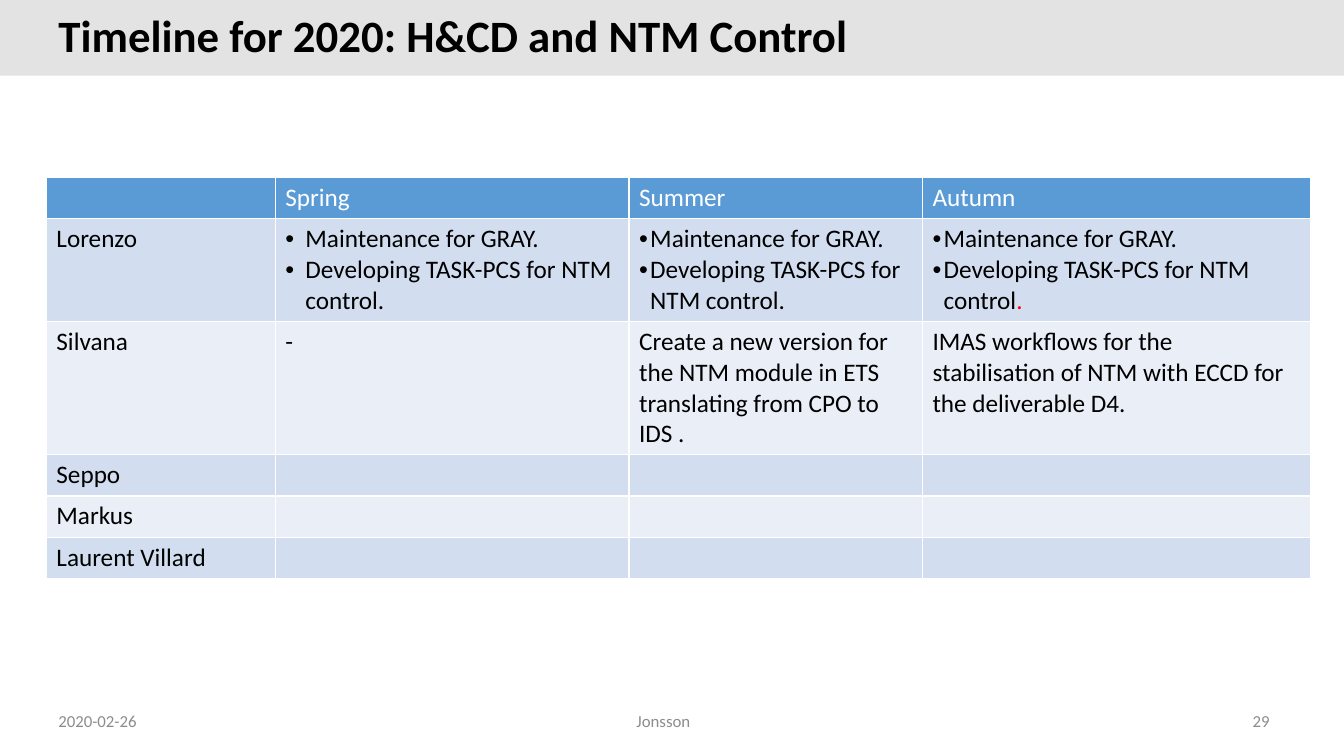
from lxml import etree
from pptx import Presentation
from pptx.dml.color import RGBColor
from pptx.enum import shapes, text
from pptx.oxml import ns
from pptx.util import Inches, Pt

BLACK = RGBColor(0, 0, 0)
WHITE = RGBColor(255, 255, 255)
RED = RGBColor(255, 0, 0)
BAND_GRAY = RGBColor(0xE3, 0xE3, 0xE3)
FOOTER_GRAY = RGBColor(0x8C, 0x8C, 0x8C)
HEADER_BLUE = RGBColor(0x5B, 0x9B, 0xD5)
ROW_FILLS = (RGBColor(0xEA, 0xEF, 0xF7), RGBColor(0xD2, 0xDE, 0xEF))

COLUMN_WIDTHS = (2.27, 3.51, 2.91, 3.85)
ROW_HEIGHTS = (0.41, 1.02, 1.32, 0.41, 0.41, 0.41)
GRAY_TASKS = ["Maintenance for GRAY.", "Developing TASK-PCS for NTM control."]
ROWS = (
    ("", "Spring", "Summer", "Autumn"),
    ("Lorenzo", GRAY_TASKS, GRAY_TASKS, GRAY_TASKS),
    ("Silvana", "-",
     "Create a new version for the NTM module in ETS translating from CPO to IDS .",
     "IMAS workflows for the stabilisation of NTM with ECCD for the deliverable D4."),
    ("Seppo", "", "", ""),
    ("Markus", "", "", ""),
    ("Laurent Villard", "", "", ""),
)


def add_run(p, words, size=18, color=BLACK, bold=False):
    r = p.add_run()
    r.text = words
    r.font.name = "Calibri"
    r.font.size = Pt(size)
    r.font.bold = bold
    r.font.color.rgb = color
    return r


def set_bullet(p, indent):
    """Give the paragraph a hanging bullet, indent in inches."""
    pPr = p._p.get_or_add_pPr()
    pPr.set("marL", str(Inches(indent)))
    pPr.set("indent", str(-Inches(indent)))
    etree.SubElement(pPr, ns.qn("a:buFont")).set("typeface", "Arial")
    etree.SubElement(pPr, ns.qn("a:buChar")).set("char", "•")


def add_band(slide):
    """Draw the gray strip behind the title."""
    sp = slide.shapes.add_shape(shapes.MSO_SHAPE.RECTANGLE, 0, 0,
                                Inches(13.33), Inches(0.75))
    sp.shadow.inherit = False
    sp.fill.solid()
    sp.fill.fore_color.rgb = BAND_GRAY
    sp.line.fill.background()
    slide.shapes._spTree.insert(2, sp._element)


def set_title(slide, words):
    title = slide.shapes.title
    title.left, title.top = Inches(0.48), Inches(0.13)
    title.width, title.height = Inches(11.54), Inches(0.49)
    tf = title.text_frame
    tf.auto_size = text.MSO_AUTO_SIZE.NONE
    tf.vertical_anchor = text.MSO_ANCHOR.MIDDLE
    p = tf.paragraphs[0]
    p.alignment = text.PP_ALIGN.LEFT
    p.line_spacing = 0.9
    add_run(p, words, size=32, bold=True)


def fill_cell(cell, content, fill, color, indent):
    """Write a string, or a list of bullets, into a coloured cell."""
    cell.fill.solid()
    cell.fill.fore_color.rgb = fill
    tf = cell.text_frame
    if isinstance(content, str):
        if content:
            add_run(tf.paragraphs[0], content, color=color)
        return
    for i, item in enumerate(content):
        p = tf.add_paragraph() if i else tf.paragraphs[0]
        set_bullet(p, indent)
        add_run(p, item, color=color)


def add_timeline(slide):
    table = slide.shapes.add_table(
        len(ROWS), len(COLUMN_WIDTHS), Inches(0.46), Inches(1.76),
        Inches(sum(COLUMN_WIDTHS)), Inches(sum(ROW_HEIGHTS))).table
    for column, width in zip(table.columns, COLUMN_WIDTHS):
        column.width = Inches(width)
    for i, (contents, height) in enumerate(zip(ROWS, ROW_HEIGHTS)):
        table.rows[i].height = Inches(height)
        fill = ROW_FILLS[i % 2] if i else HEADER_BLUE
        color = BLACK if i else WHITE
        for j, content in enumerate(contents):
            indent = 0.2 if j == 1 else 0.11
            fill_cell(table.cell(i, j), content, fill, color, indent)
    # The full stop of the last autumn task is red.
    p = table.cell(1, 3).text_frame.paragraphs[-1]
    p.runs[0].text = p.runs[0].text.rstrip(".")
    add_run(p, ".", color=RED)


def add_footer(slide, words, left, width, align):
    box = slide.shapes.add_textbox(Inches(left), Inches(6.95),
                                   Inches(width), Inches(0.4))
    tf = box.text_frame
    tf.word_wrap = True
    tf.vertical_anchor = text.MSO_ANCHOR.MIDDLE
    p = tf.paragraphs[0]
    p.alignment = align
    add_run(p, words, size=12, color=FOOTER_GRAY)


def main():
    prs = Presentation()
    prs.slide_width, prs.slide_height = Inches(13.33), Inches(7.5)
    slide = prs.slides.add_slide(prs.slide_layouts[5])
    add_band(slide)
    set_title(slide, "Timeline for 2020: H&CD and NTM Control")
    add_timeline(slide)
    add_footer(slide, "2020-02-26", 0.48, 3, text.PP_ALIGN.LEFT)
    add_footer(slide, "Jonsson", 4.33, 4.5, text.PP_ALIGN.CENTER)
    add_footer(slide, "29", 9.69, 3, text.PP_ALIGN.RIGHT)
    prs.save("out.pptx")


if __name__ == "__main__":
    main()
